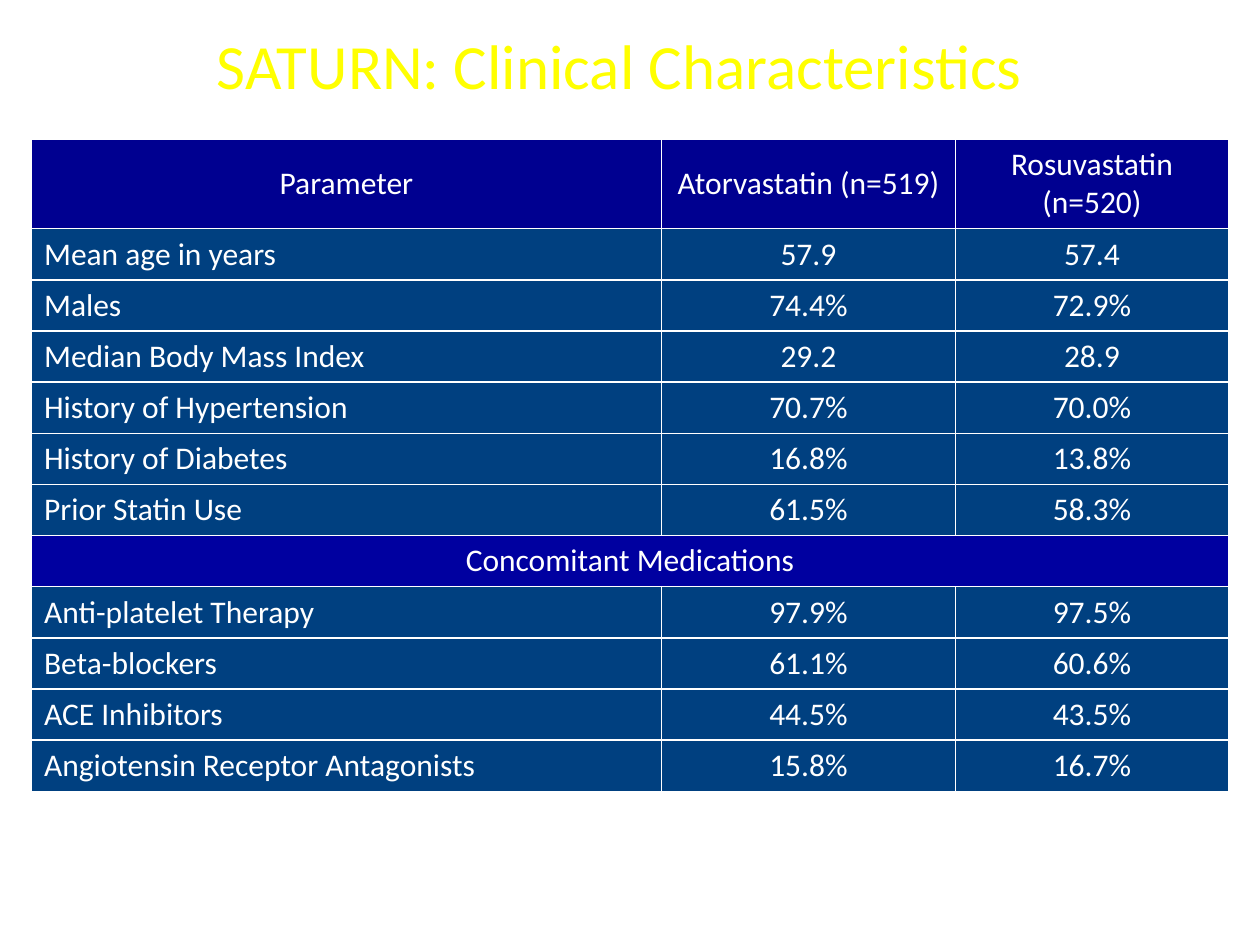
from dataclasses import dataclass

import lxml.etree
import pptx
import pptx.dml.color
import pptx.enum.text
import pptx.oxml
import pptx.oxml.ns
import pptx.util

Pt = pptx.util.Pt
Align = pptx.enum.text.PP_ALIGN
MIDDLE = pptx.enum.text.MSO_ANCHOR.MIDDLE
NAMESPACE = pptx.oxml.ns.nsdecls("a")


@dataclass(frozen=True)
class Theme:
    font: str = "Calibri"
    title_size: int = 36
    table_size: int = 18
    title: str = "FFFF00"
    text: str = "FFFFFF"
    border: str = "FFFFFF"
    header: str = "000090"
    section: str = "0000A0"
    body: str = "004080"


@dataclass(frozen=True)
class Characteristic:
    parameter: str
    atorvastatin: str
    rosuvastatin: str


THEME = Theme()
HEADER = Characteristic("Parameter", "Atorvastatin (n=519)", "Rosuvastatin (n=520)")
CLINICAL = [
    Characteristic("Mean age in years", "57.9", "57.4"),
    Characteristic("Males", "74.4%", "72.9%"),
    Characteristic("Median Body Mass Index", "29.2", "28.9"),
    Characteristic("History of Hypertension", "70.7%", "70.0%"),
    Characteristic("History of Diabetes", "16.8%", "13.8%"),
    Characteristic("Prior Statin Use", "61.5%", "58.3%"),
]
SECTION = Characteristic("Concomitant Medications", "", "")
MEDICATIONS = [
    Characteristic("Anti-platelet Therapy", "97.9%", "97.5%"),
    Characteristic("Beta-blockers", "61.1%", "60.6%"),
    Characteristic("ACE Inhibitors", "44.5%", "43.5%"),
    Characteristic("Angiotensin Receptor Antagonists", "15.8%", "16.7%"),
]
COLUMN_WIDTHS = [360, 168, 156]
ROW_HEIGHT = 29.25
VALUE_FORMAT = {"margin_left": Pt(5), "margin_right": Pt(5),
                "margin_top": 0, "margin_bottom": 0}


def apply_format(target: object, values: dict) -> None:
    for attribute, value in values.items():
        setattr(target, attribute, value)


def style_font(font: pptx.text.text.Font, size: int, color: str) -> None:
    apply_format(font, {"name": THEME.font, "size": Pt(size), "bold": False})
    font.color.rgb = pptx.dml.color.RGBColor.from_string(color)


def draw_borders(cell: pptx.table._Cell) -> None:
    properties = cell._tc.get_or_add_tcPr()
    for side in ("lnL", "lnR", "lnT", "lnB"):
        properties.append(pptx.oxml.parse_xml(
            f'<a:{side} {NAMESPACE} w="{Pt(1)}"><a:solidFill>'
            f'<a:srgbClr val="{THEME.border}"/></a:solidFill></a:{side}>'))


def draw_cell(cell: pptx.table._Cell, text: str, fill: str, align: Align) -> None:
    draw_borders(cell)
    cell.fill.solid()
    cell.fill.fore_color.rgb = pptx.dml.color.RGBColor.from_string(fill)
    cell.vertical_anchor = MIDDLE
    paragraph = cell.text_frame.paragraphs[0]
    paragraph.alignment = align
    if text:
        run = paragraph.add_run()
        run.text = text
        style_font(run.font, THEME.table_size, THEME.text)


def draw_row(table: pptx.table.Table, index: int, entry: Characteristic,
             fill: str, parameter_align: Align = Align.CENTER) -> None:
    texts = (entry.parameter, entry.atorvastatin, entry.rosuvastatin)
    for column, text in enumerate(texts):
        align = Align.CENTER if column else parameter_align
        draw_cell(table.cell(index, column), text, fill, align)


def draw_characteristics(table: pptx.table.Table, first_row: int,
                         entries: list[Characteristic]) -> None:
    for index, entry in enumerate(entries, first_row):
        draw_row(table, index, entry, THEME.body, Align.LEFT)
        for column in (1, 2):
            value_cell = table.cell(index, column)
            apply_format(value_cell, VALUE_FORMAT)
            value_cell.text_frame.paragraphs[0].space_after = Pt(10)


def draw_title(slide: pptx.slide.Slide, text: str) -> None:
    title = slide.shapes.title
    apply_format(title, {"left": Pt(30), "top": Pt(-8),
                         "width": Pt(648), "height": Pt(90)})
    apply_format(title.text_frame, {"word_wrap": True, "vertical_anchor": MIDDLE})
    paragraph = title.text_frame.paragraphs[0]
    paragraph.alignment = Align.CENTER
    run = paragraph.add_run()
    run.text = text
    style_font(run.font, THEME.title_size, THEME.title)
    color_fill = run._r.rPr.find(pptx.oxml.ns.qn("a:solidFill"))
    color_fill.addnext(pptx.oxml.parse_xml(
        f'<a:effectLst {NAMESPACE}><a:outerShdw blurRad="{Pt(3)}" dist="{Pt(3)}" '
        'dir="2700000" algn="tl"><a:srgbClr val="000000"><a:alpha val="43000"/>'
        '</a:srgbClr></a:outerShdw></a:effectLst>'))


def draw_table(slide: pptx.slide.Slide) -> None:
    section_row = len(CLINICAL) + 1
    row_count = section_row + 1 + len(MEDICATIONS)
    table = slide.shapes.add_table(
        row_count, len(COLUMN_WIDTHS), Pt(18), Pt(79.5),
        Pt(sum(COLUMN_WIDTHS)), Pt(ROW_HEIGHT * row_count)).table
    apply_format(table, {"first_row": False, "horz_banding": False})
    for column, width in zip(table.columns, COLUMN_WIDTHS):
        column.width = Pt(width)
    for row in table.rows:
        row.height = Pt(ROW_HEIGHT)
    draw_row(table, 0, HEADER, THEME.header)
    draw_characteristics(table, 1, CLINICAL)
    draw_row(table, section_row, SECTION, THEME.section)
    table.cell(section_row, 0).merge(table.cell(section_row, 2))
    draw_characteristics(table, section_row + 1, MEDICATIONS)


def main() -> None:
    presentation = pptx.Presentation()
    apply_format(presentation, {"slide_width": Pt(720), "slide_height": Pt(540)})
    slide = presentation.slides.add_slide(presentation.slide_layouts[5])
    draw_title(slide, "SATURN: Clinical Characteristics")
    draw_table(slide)
    presentation.save("out.pptx")


if __name__ == "__main__":
    main()
